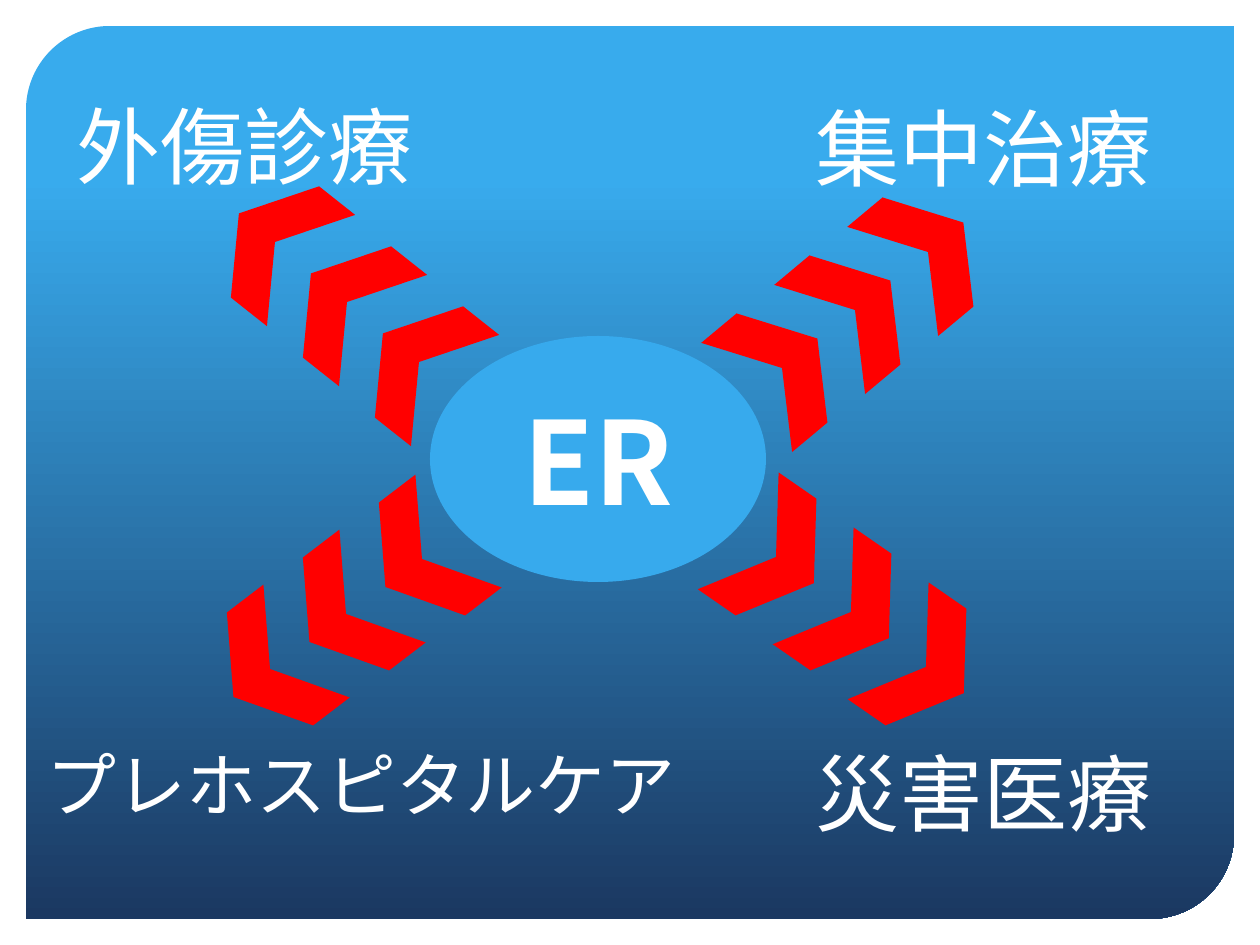
from lxml import etree
from pptx import Presentation
from pptx.dml.color import RGBColor
from pptx.enum.shapes import MSO_SHAPE as SHAPE
from pptx.enum.text import MSO_ANCHOR as ANCHOR, MSO_AUTO_SIZE as AUTO, PP_ALIGN as ALIGN
from pptx.oxml.ns import qn
from pptx.util import Emu, Pt

EMU_PER_PX = 914400 / 126
WHITE, RED, SKY, NAVY = "FFFFFF", "FF0000", "38ABED", "1B3861"


def px(n):
    return Emu(round(n * EMU_PER_PX))


def rgb(value):
    return RGBColor.from_string(value)


class Deck:
    font = "Noto Sans CJK JP"

    def __init__(self):
        self.prs = Presentation()
        self.prs.slide_width, self.prs.slide_height = px(1260), px(945)
        self.s = self.prs.slides.add_slide(self.prs.slide_layouts[6])

    def shape(self, kind, box, color=None, parent=None):
        shapes = (parent or self.s).shapes
        sp = shapes.add_shape(kind, *map(px, box))
        sp.shadow.inherit = False
        sp.line.fill.background()
        if color:
            sp.fill.solid()
            sp.fill.fore_color.rgb = rgb(color)
        return sp

    def panel(self, box, stops):
        """Rounded panel with a gradient running from top to bottom."""
        sp = self.shape(SHAPE.ROUND_2_DIAG_RECTANGLE, box)
        sp.adjustments[0], sp.adjustments[1] = 0.094, 0
        sp.fill.gradient()
        sp.fill.gradient_angle = 270
        for stop, (position, color) in zip(sp.fill.gradient_stops, stops):
            stop.position = position
            stop.color.rgb = rgb(color)

    def add_text(self, sp, text, size, bold=False):
        p = sp.text_frame.paragraphs[0]
        r = p.add_run()
        r.text = text
        r.font.color.rgb = rgb(WHITE)
        for name, value in dict(name=self.font, size=Pt(size), bold=bold).items():
            setattr(r.font, name, value)
        etree.SubElement(r.font._element, qn("a:ea"), typeface=self.font)
        return p

    def ellipse(self, box, color, text, size):
        sp = self.shape(SHAPE.OVAL, box, color)
        sp.text_frame.vertical_anchor = ANCHOR.MIDDLE
        self.add_text(sp, text, size, bold=True).alignment = ALIGN.CENTER

    def label(self, box, text, size):
        sp = self.s.shapes.add_textbox(*map(px, box))
        self.add_text(sp, text, size)
        sp.text_frame.word_wrap = False
        sp.text_frame.auto_size = AUTO.SHAPE_TO_FIT_TEXT

    def chevrons(self, start, step, angle, count=3):
        """Group of chevrons marching outwards from start."""
        group = self.s.shapes.add_group_shape()
        for i in range(count):
            x, y = start[0] + i * step[0], start[1] + i * step[1]
            sp = self.shape(SHAPE.CHEVRON, (x, y, 92, 142), RED, group)
            sp.rotation = angle


def main():
    deck = Deck()
    deck.panel((26, 26, 1208, 893), [(0.17, SKY), (1, NAVY)])
    deck.ellipse((430, 336, 336, 246), "37AAED", "ER", 66)
    for box, text, size in [
        ((64, 88, 364, 115), "外傷診療", 48),
        ((803, 90, 364, 115), "集中治療", 48),
        ((34, 735, 662, 97), "プレホスピタルケア", 40),
        ((803, 735, 364, 115), "災害医療", 48),
    ]:
        deck.label(box, text, size)
    for start, step, angle in [
        ((373, 291), (-72, -60), 218.4),
        ((736, 297), (73, -58), 320.2),
        ((376, 488), (-76, 55), 142.6),
        ((730, 486), (75, 55), 34.7),
    ]:
        deck.chevrons(start, step, angle)
    deck.prs.save("out.pptx")


if __name__ == "__main__":
    main()
